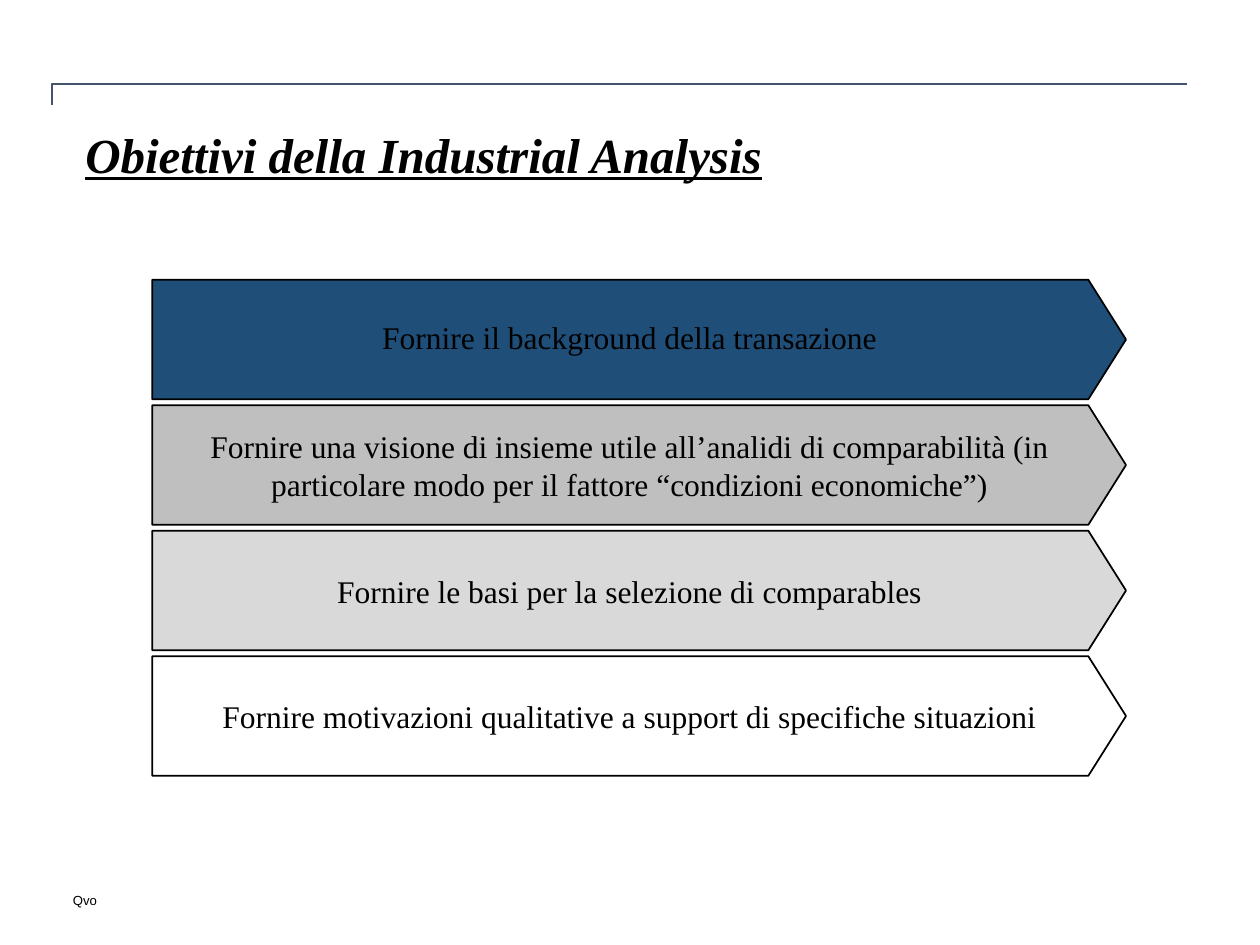
from lxml import etree
from pptx import Presentation
from pptx.dml.color import RGBColor
from pptx.enum.shapes import MSO_CONNECTOR, MSO_SHAPE
from pptx.enum.text import MSO_ANCHOR, PP_ALIGN
from pptx.oxml.ns import qn
from pptx.util import Cm, Pt

ELBOW = MSO_CONNECTOR.ELBOW
PENTAGON = MSO_SHAPE.PENTAGON
MIDDLE = MSO_ANCHOR.MIDDLE
CENTER = PP_ALIGN.CENTER


def color(value):
    return RGBColor.from_string(value)


def write(para, text, size, font_name):
    span = para.add_run()
    span.text = text
    span.font.size = Pt(size)
    span.font.name = font_name
    span.font.color.rgb = color("000000")
    return span


deck = Presentation()
deck.slide_width = Cm(25.4)
deck.slide_height = Cm(19.05)
page = deck.slides.add_slide(deck.slide_layouts[6])

footer = page.shapes.add_textbox(Cm(1.47), Cm(17.98), Cm(7.19), Cm(0.43))
frame = footer.text_frame
frame.word_wrap = True
frame.margin_left = frame.margin_right = frame.margin_top = frame.margin_bottom = 0
write(frame.paragraphs[0], "Qvo", 7.5, "Arial")

rule = page.shapes.add_connector(ELBOW, Cm(12.7), Cm(13.34), Cm(12.28), Cm(-9.53))
rule.line.color.rgb = color("44546A")
rule.line.width = Pt(1)
properties = rule._element.spPr
properties.find(qn("a:xfrm")).set("rot", "5400000")
properties.find(qn("a:prstGeom")).set("prst", "bentConnector2")
etree.SubElement(properties, qn("a:effectLst"))

title = page.shapes.add_textbox(Cm(1.47), Cm(1.9), Cm(22.43), Cm(2.54))
frame = title.text_frame
frame.word_wrap = True
frame.vertical_anchor = MIDDLE
para = frame.paragraphs[0]
para.line_spacing = 0.9
span = write(para, "Obiettivi della Industrial Analysis", 28, "Times New Roman")
span.font.bold = span.font.italic = span.font.underline = True

goals = [
    ("Fornire il background della transazione", "1F4E79"),
    ("Fornire una visione di insieme utile all’analidi di comparabilità "
     "(in particolare modo per il fattore “condizioni economiche”)", "BFBFBF"),
    ("Fornire le basi per la selezione di comparables", "D9D9D9"),
    ("Fornire motivazioni qualitative a support di specifiche situazioni", "FFFFFF"),
]
goal_paras = []
for index, (text, fill) in enumerate(goals):
    arrow = page.shapes.add_shape(
        PENTAGON, Cm(3.07), Cm(5.64 + 2.53 * index), Cm(19.63), Cm(2.41))
    arrow.adjustments[0] = 0.315
    arrow.shadow.inherit = False
    arrow.fill.solid()
    arrow.fill.fore_color.rgb = color(fill)
    arrow.line.color.rgb = color("000000")
    arrow.line.width = Pt(1)
    frame = arrow.text_frame
    frame.word_wrap = True
    frame.vertical_anchor = MIDDLE
    para = frame.paragraphs[0]
    para.alignment = CENTER
    write(para, text, 18, "Times New Roman")
    goal_paras.append(para)

goal_paras[0].line_spacing = 0.9
goal_paras[0].space_before = Pt(10)

deck.save("out.pptx")
